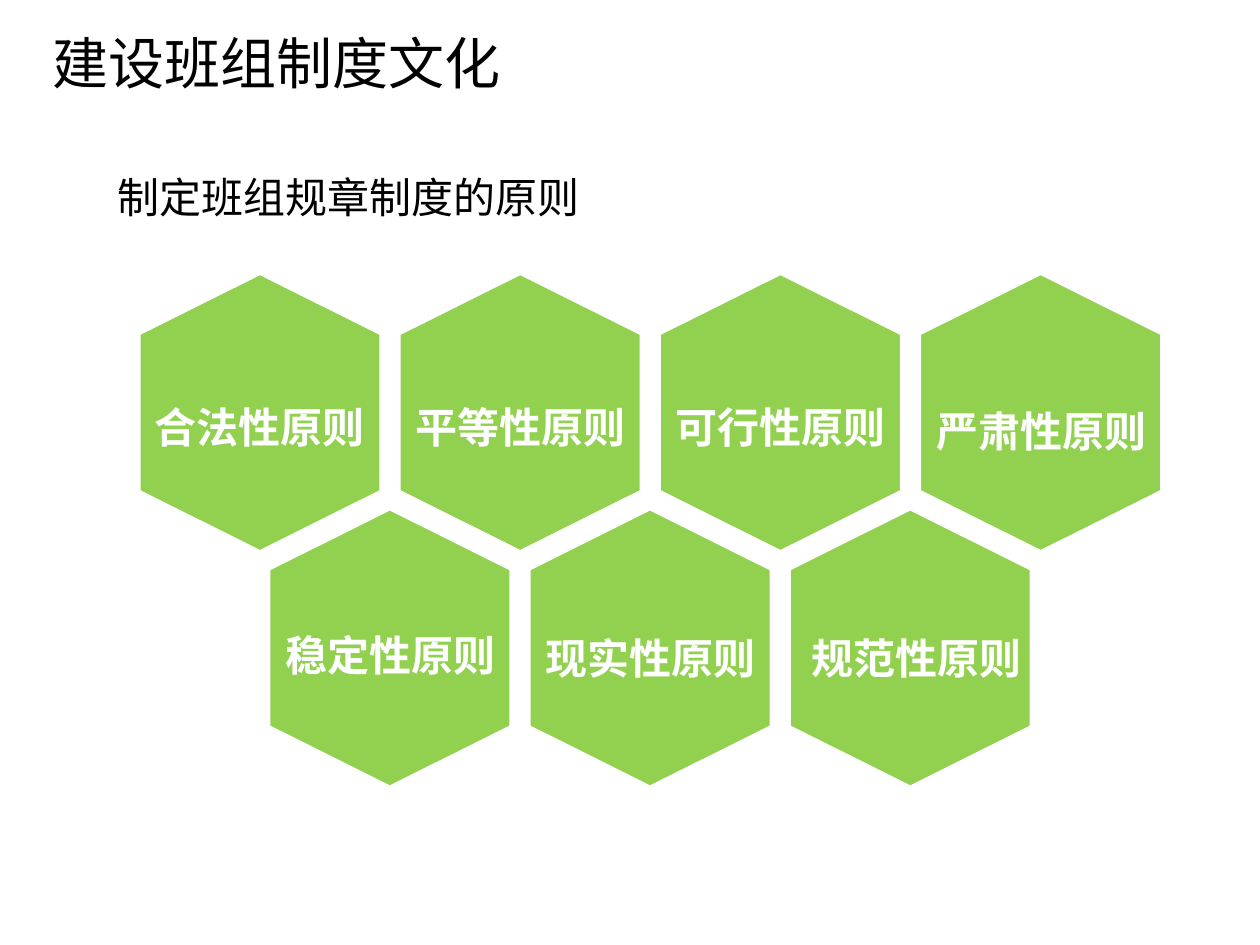
from dataclasses import dataclass

from lxml import etree
from pptx import Presentation
from pptx.dml.color import RGBColor
from pptx.enum.text import MSO_ANCHOR, MSO_AUTO_SIZE, PP_ALIGN
from pptx.oxml.ns import qn
from pptx.util import Pt

LEFT, CENTER = PP_ALIGN.LEFT, PP_ALIGN.CENTER
TOP, MIDDLE = MSO_ANCHOR.TOP, MSO_ANCHOR.MIDDLE
FIXED = MSO_AUTO_SIZE.NONE


@dataclass(frozen=True)
class Theme:
    green: RGBColor = RGBColor(0x92, 0xD0, 0x50)
    white: RGBColor = RGBColor(0xFF, 0xFF, 0xFF)
    black: RGBColor = RGBColor(0, 0, 0)
    sans: str = "Noto Sans CJK SC"
    latin: str = "Calibri"
    title: int = 32
    text: int = 24


@dataclass(frozen=True)
class Cell:
    """A hexagon with its label; dx and dy move the label off its usual place."""
    row: int
    col: int
    label: str
    dx: float = 0
    dy: float = 0

    @property
    def left(self) -> float:
        return ROW_LEFT[self.row] + self.col * PITCH

    @property
    def top(self) -> float:
        return ROW_TOP[self.row]


THEME = Theme()
WIDTH, HEIGHT, SLOPE = 137.5, 158.1, 34.3
PITCH = 148.7
ROW_LEFT = (79.8, 154)
ROW_TOP = (156.7, 291.2)
LABEL_TOP, LABEL_HEIGHT = (219.6, 350), 39.6

CELLS = (
    Cell(0, 0, "合法性原则"),
    Cell(0, 1, "平等性原则"),
    Cell(0, 2, "可行性原则"),
    Cell(0, 3, "严肃性原则", dx=0.5, dy=2),
    Cell(1, 0, "稳定性原则", dx=0.5),
    Cell(1, 1, "现实性原则", dy=1.5),
    Cell(1, 2, "规范性原则", dx=3.7, dy=1.5),
)


def place(shape, left: float, top: float, width: float, height: float) -> None:
    shape.left, shape.top = Pt(left), Pt(top)
    shape.width, shape.height = Pt(width), Pt(height)


def write(shape, text: str, size: int, color: RGBColor, face: str,
          align=LEFT, anchor=TOP, bold: bool = False):
    """Fill the shape with one styled paragraph and return it."""
    frame = shape.text_frame
    frame.word_wrap, frame.auto_size = True, FIXED
    frame.vertical_anchor = anchor
    para = frame.paragraphs[0]
    para.text, para.alignment = text, align
    para.space_before = Pt(0)
    props = para._p.get_or_add_pPr()
    props.set("marL", "0")
    props.set("indent", "0")
    etree.SubElement(props, qn("a:buNone"))
    font = para.font
    font.size, font.bold, font.name = Pt(size), bold, face
    font.color.rgb = color
    east = etree.SubElement(props.find(qn("a:defRPr")), qn("a:ea"))
    east.set("typeface", THEME.sans)
    return para


def draw_hex(slide, cell: Cell) -> None:
    x, y = cell.left, cell.top
    mid, right = x + WIDTH / 2, x + WIDTH
    high, low = y + SLOPE, y + HEIGHT - SLOPE
    points = ((right, high), (right, low), (mid, y + HEIGHT), (x, low), (x, high))
    path = slide.shapes.build_freeform(Pt(mid), Pt(y))
    path.add_line_segments([(Pt(a), Pt(b)) for a, b in points], close=True)
    shape = path.convert_to_shape()
    shape.shadow.inherit = False
    shape.fill.solid()
    shape.fill.fore_color.rgb = THEME.green
    shape.line.color.rgb = THEME.white
    shape.line.width = Pt(1)


def draw_label(slide, cell: Cell) -> None:
    box = slide.shapes.add_textbox(
        Pt(cell.left + cell.dx), Pt(LABEL_TOP[cell.row] + cell.dy),
        Pt(WIDTH), Pt(LABEL_HEIGHT))
    para = write(box, cell.label, THEME.text, THEME.white, THEME.sans,
                 align=CENTER, bold=True)
    para.line_spacing = 1.22


def main() -> None:
    deck = Presentation()
    deck.slide_width, deck.slide_height = Pt(720), Pt(540)
    slide = deck.slides.add_slide(deck.slide_layouts[1])

    title, body = slide.shapes.title, slide.placeholders[1]
    place(title, 0, 0, 720, 70.6)
    write(title, "建设班组制度文化", THEME.title, THEME.black, THEME.sans,
          anchor=MIDDLE)
    title.text_frame.margin_left = Pt(30.2)
    place(body, 59.8, 94.3, 646.6, 33.8)
    write(body, "制定班组规章制度的原则", THEME.text, THEME.black, THEME.latin)

    for cell in CELLS:
        draw_hex(slide, cell)
    for cell in CELLS:
        draw_label(slide, cell)
    deck.save("out.pptx")


if __name__ == "__main__":
    main()
